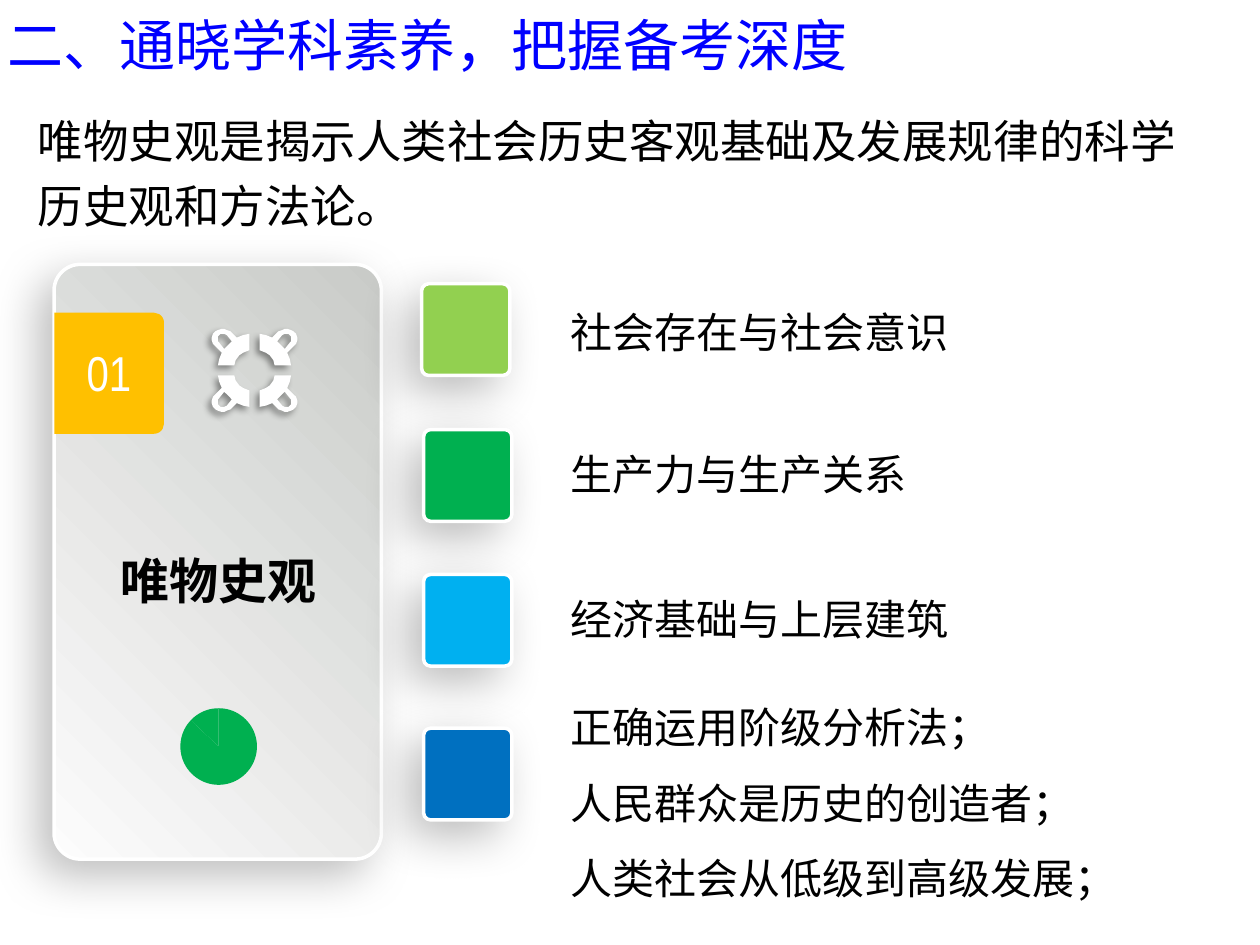
from dataclasses import dataclass
from itertools import product

from lxml import etree
from pptx import Presentation
from pptx.chart.data import CategoryChartData
from pptx.dml.color import RGBColor
from pptx.enum.chart import XL_CHART_TYPE
from pptx.enum.shapes import MSO_SHAPE
from pptx.enum.text import MSO_ANCHOR, MSO_AUTO_SIZE, PP_ALIGN
from pptx.oxml import parse_xml
from pptx.oxml.ns import nsdecls, qn
from pptx.util import Cm, Pt

ROUND = MSO_SHAPE.ROUNDED_RECTANGLE
TAB = MSO_SHAPE.ROUND_2_SAME_RECTANGLE
PIE = XL_CHART_TYPE.PIE
LEFT, MID = PP_ALIGN.LEFT, PP_ALIGN.CENTER
TOP = MSO_ANCHOR.TOP
GROW = MSO_AUTO_SIZE.SHAPE_TO_FIT_TEXT
SANS = "Noto Sans CJK SC"
GREEN = "00B050"

ARM = [(26, 33), (24, 33), (22, 32), (19, 31), (14, 26), (9, 28), (4, 29),
       (4, 16), (9, 14), (12, 12), (15, 8), (16, 4), (29, 4), (28, 9),
       (26, 14), (31, 19), (33, 21), (34, 24), (34, 26), (33, 29),
       (31, 31), (29, 32)]
HOLE = [(25, 29), (27, 29), (28, 28), (29, 27), (29, 25), (29, 23),
        (28, 22), (24, 17), (21, 20), (18, 23), (22, 28), (24, 29)]


@dataclass
class Box:
    left: float
    top: float
    width: float
    height: float

    def place(self) -> list:
        return [Cm(v) for v in (self.left, self.top, self.width, self.height)]


@dataclass
class Style:
    size: int
    color: str = "000000"
    font: str = SANS
    bold: bool = False
    align: PP_ALIGN = LEFT
    space: float = 1.0


@dataclass
class Item:
    block: Box
    color: str
    label: Box
    lines: list


def tint(code: str) -> RGBColor:
    return RGBColor.from_string(code)


def shade(shape, alpha: int, blur: float, dist: float) -> None:
    shape.shadow.inherit = False
    effect = shape._element.spPr.find(qn("a:effectLst"))
    outer = etree.SubElement(effect, qn("a:outerShdw"), blurRad=str(Pt(blur)),
                             dist=str(Pt(dist)), dir="8100000", algn="tr",
                             rotWithShape="0")
    black = etree.SubElement(outer, qn("a:srgbClr"), val="000000")
    etree.SubElement(black, qn("a:alpha"), val=str(alpha * 1000))


def write(shape, lines: list, style: Style) -> None:
    frame = shape.text_frame
    frame.word_wrap = True
    frame.auto_size = GROW
    frame.vertical_anchor = TOP
    for i, line in enumerate(lines):
        para = frame.add_paragraph() if i else frame.paragraphs[0]
        para.alignment = style.align
        para.line_spacing = style.space
        run = para.add_run()
        run.text = line
        font = run.font
        font.name = style.font
        font.size = Pt(style.size)
        font.bold = style.bold
        font.color.rgb = tint(style.color)
        latin = run._r.rPr.find(qn("a:latin"))
        latin.addnext(parse_xml(
            f'<a:ea {nsdecls("a")} typeface="{style.font}"/>'))


def label(slide, box: Box, lines: list, style: Style) -> None:
    write(slide.shapes.add_textbox(*box.place()), lines, style)


def panel(slide, box: Box, color: str):
    shape = slide.shapes.add_shape(ROUND, *box.place())
    shape.adjustments[0] = 0.08
    shape.fill.solid()
    shape.fill.fore_color.rgb = tint(color)
    shape.line.color.rgb = tint("FFFFFF")
    shape.line.width = Pt(2)
    shade(shape, 26, 27, 12)
    return shape


def card(slide, box: Box) -> None:
    fill = panel(slide, box, "FCFCFC").fill
    fill.gradient()
    fill.gradient_angle = 225
    for stop, code, spot in zip(fill.gradient_stops, ("C9CBC8", "FCFCFC"), (0, 1)):
        stop.color.rgb = tint(code)
        stop.position = spot


def tab(slide, box: Box) -> None:
    shape = slide.shapes.add_shape(TAB, *box.place())
    shape.rotation = 90
    shape.adjustments[0] = 0.09
    shape.fill.solid()
    shape.fill.fore_color.rgb = tint("FFC000")
    shape.line.fill.background()
    shape.shadow.inherit = False


def icon(slide, x: int, y: int) -> None:
    loops = [[(x + sx * dx, y + sy * dy) for dx, dy in loop]
             for sx, sy, loop in product((-1, 1), (-1, 1), (ARM, HOLE))]
    pen = slide.shapes.build_freeform(*loops[0][0], scale=Cm(0.0254))
    for i, loop in enumerate(loops):
        if i:
            pen.move_to(*loop[0])
        pen.add_line_segments(loop[1:], close=True)
    shape = pen.convert_to_shape()
    shape.fill.solid()
    shape.fill.fore_color.rgb = tint("FFFFFF")
    shape.line.fill.background()
    shade(shape, 40, 4, 3)


def pie(slide, box: Box) -> None:
    data = CategoryChartData()
    data.categories = ["1", "2"]
    data.add_series("Series 1", (87, 13))
    chart = slide.shapes.add_chart(PIE, *box.place(), data).chart
    chart.has_legend = False
    chart.has_title = False
    chart.font.name = "Calibri"
    chart.font.size = Pt(18)
    chart.font.color.rgb = tint("000000")
    plot = chart.plots[0]
    plot.vary_by_categories = False
    for i in range(2):
        form = plot.series[0].points[i].format
        form.fill.solid()
        form.fill.fore_color.rgb = tint(GREEN)
        form.line.fill.background()
    area = chart._chartSpace.chart.plotArea
    for old in area.findall(qn("c:layout")):
        area.remove(old)
    spots = {"x": 0.27, "y": 0.16, "w": 0.46, "h": 0.69}
    marks = "".join(f'<c:{k}Mode val="edge"/>' for k in "xy")
    marks += "".join(f'<c:{k} val="{v}"/>' for k, v in spots.items())
    area.insert(0, parse_xml(
        f'<c:layout {nsdecls("c")}><c:manualLayout>'
        f'<c:layoutTarget val="inner"/>{marks}</c:manualLayout></c:layout>'))


ITEMS = [
    Item(Box(8.5, 5.72, 1.78, 1.85), "92D050",
         Box(11.25, 5.54, 9.25, 1.63), ["社会存在与社会意识"]),
    Item(Box(8.54, 8.66, 1.78, 1.85), GREEN,
         Box(11.25, 8.41, 7.44, 1.63), ["生产力与生产关系"]),
    Item(Box(8.54, 11.58, 1.78, 1.85), "00B0F0",
         Box(11.25, 11.33, 8.46, 1.63), ["经济基础与上层建筑"]),
    Item(Box(8.54, 14.68, 1.78, 1.85), "0070C0",
         Box(11.25, 13.51, 11.7, 4.88),
         ["正确运用阶级分析法；", "人民群众是历史的创造者；",
          "人类社会从低级到高级发展；"]),
]


def main() -> None:
    deck = Presentation()
    deck.slide_width, deck.slide_height = Cm(25.4), Cm(19.05)
    slide = deck.slides.add_slide(deck.slide_layouts[5])
    title = slide.shapes.title
    title.left, title.top, title.width, title.height = Box(
        -0.1, 0.08, 19.35, 1.63).place()
    write(title, ["二、通晓学科素养，把握备考深度"], Style(32, "0000FF"))
    label(slide, Box(0.51, 1.93, 24, 2.92),
          ["唯物史观是揭示人类社会历史客观基础及发展规律的科学历史观和方法论。"],
          Style(26, space=1.2))
    card(slide, Box(1.09, 5.33, 6.6, 11.99))
    tab(slide, Box(0.98, 6.42, 2.44, 2.21))
    label(slide, Box(1.37, 6.78, 1.65, 1.45), ["01"],
          Style(28, "FFFFFF", "Arial Narrow", align=MID))
    label(slide, Box(1.17, 10.97, 6.48, 1.45), ["唯物史观"],
          Style(28, bold=True, align=MID))
    pie(slide, Box(2.72, 13.92, 3.38, 2.24))
    icon(slide, 202, 294)
    for item in ITEMS:
        panel(slide, item.block, item.color)
        label(slide, item.label, item.lines, Style(24, space=1.5))
    deck.save("out.pptx")


if __name__ == "__main__":
    main()
